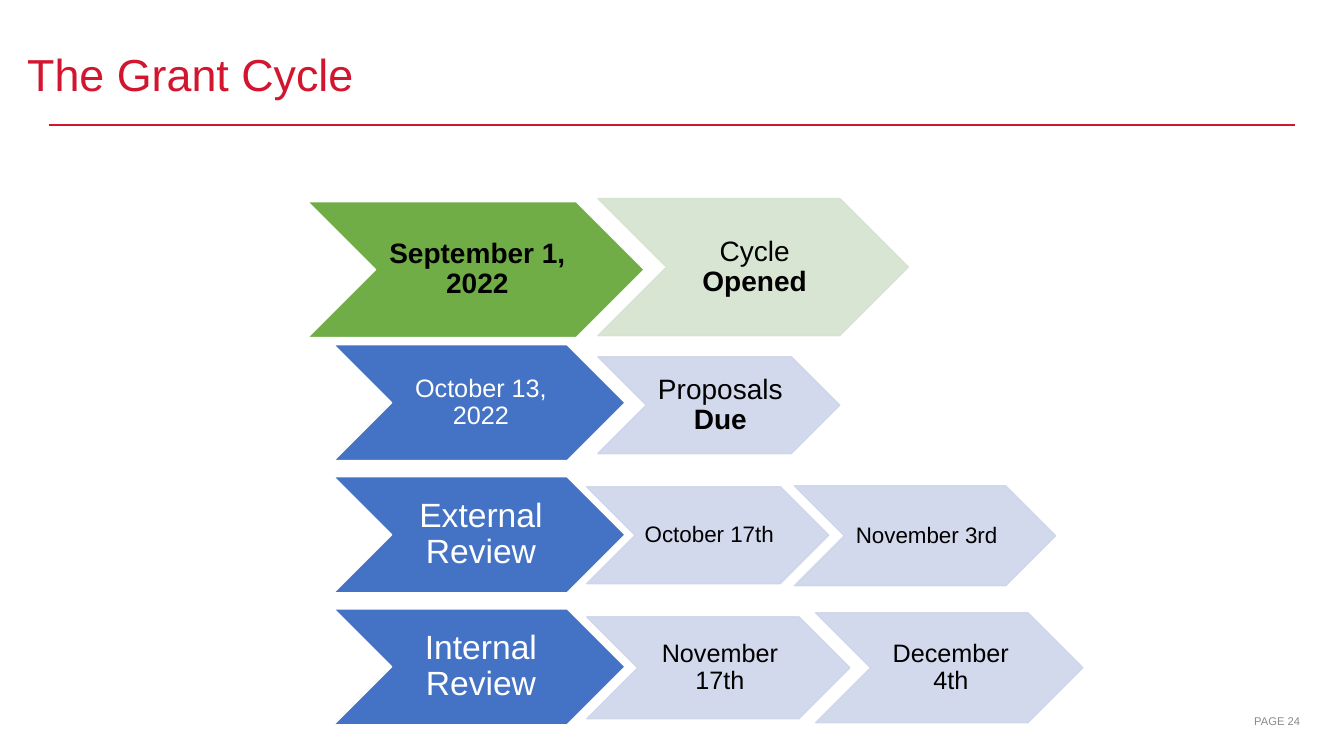
from pptx import Presentation, util as u
from pptx.dml.color import RGBColor
from pptx.enum import shapes, text
from pptx.oxml import ns
from lxml import etree

rgb = RGBColor.from_string
RED, BLACK, WHITE = "D2162F", "000000", "FFFFFF"
GREEN, MINT, BLUE, PALE = "70AD47", "D5E3CF", "4472C4", "CFD5EA"


def px(*sizes):
    return [u.Emu(size * 9144) for size in sizes]


def write(shape, words, size, ink, bold=False, tail="", lead=None,
          align=text.PP_ALIGN.LEFT, anchor=text.MSO_ANCHOR.TOP,
          inset=(10, 5, 10, 5)):
    frame = shape.text_frame
    frame.word_wrap = True
    frame.auto_size = text.MSO_AUTO_SIZE.NONE
    frame.vertical_anchor = anchor
    (frame.margin_left, frame.margin_top,
     frame.margin_right, frame.margin_bottom) = px(*inset)
    para = frame.paragraphs[0]
    para.alignment = align
    para.line_spacing = lead
    for part, heavy in ((words, bold), (tail, True)):
        if part:
            run = para.add_run()
            run.text = part
            run.font.name = "Arial"
            run.font.size = u.Pt(size)
            run.font.bold = heavy
            run.font.color.rgb = rgb(ink)


deck = Presentation()
deck.slide_width, deck.slide_height = px(1333, 750)
slide = deck.slides.add_slide(deck.slide_layouts[5])

title = slide.shapes.title
title.left, title.top, title.width, title.height = px(17, 47, 576, 61)
write(title, "The Grant Cycle", 32, RED, lead=u.Pt(34))

rule = slide.shapes.add_connector(shapes.MSO_CONNECTOR.STRAIGHT, *px(49, 124, 1284, 124))
rule.line.color.rgb = rgb(RED)
rule.line.width = u.Pt(1.5)
etree.SubElement(rule._element.spPr, ns.qn("a:effectLst"))

steps = [
    (305, 200, 334, 135, GREEN, "September 1, 2022", "", 20, BLACK),
    (593, 197, 308, 136, MINT, "Cycle ", "Opened", 20, BLACK),
    (593, 354, 240, 96, PALE, "Proposals ", "Due", 20, BLACK),
    (582, 483, 240, 96, PALE, "October 17th", "", 16, BLACK),
    (788, 482, 259, 99, PALE, "November 3rd", "", 16, BLACK),
    (582, 612, 261, 101, PALE, "November 17th", "", 18, BLACK),
    (809, 608, 265, 109, PALE, "December 4th", "", 18, BLACK),
]
heads = [("October 13, 2022", 18), ("External Review", 24), ("Internal Review", 24)]
for row, (words, size) in enumerate(heads):
    steps.append((331, 342 + row * 131, 289, 115, BLUE, words, "", size, WHITE))

for left, top, wide, high, fill, words, tail, size, ink in steps:
    step = slide.shapes.add_shape(shapes.MSO_SHAPE.CHEVRON, *px(left, top, wide, high))
    step.shadow.inherit = False
    step.fill.solid()
    step.fill.fore_color.rgb = rgb(fill)
    step.line.width = u.Pt(1)
    light = fill in (MINT, PALE)
    step.line.color.rgb = rgb(fill if light else WHITE)
    if light:
        for tint in step._element.spPr.iter(ns.qn("a:srgbClr")):
            etree.SubElement(tint, ns.qn("a:alpha"), val="90000")
    write(step, words, size, ink, bold=fill == GREEN, tail=tail, lead=0.9,
          align=text.PP_ALIGN.CENTER, anchor=text.MSO_ANCHOR.MIDDLE,
          inset=(3, 1, 0, 1))

page = slide.shapes.add_textbox(*px(1234, 679, 99, 41))
write(page, "PAGE 24", 8, "87898B", lead=u.Pt(27))

deck.save("out.pptx")
